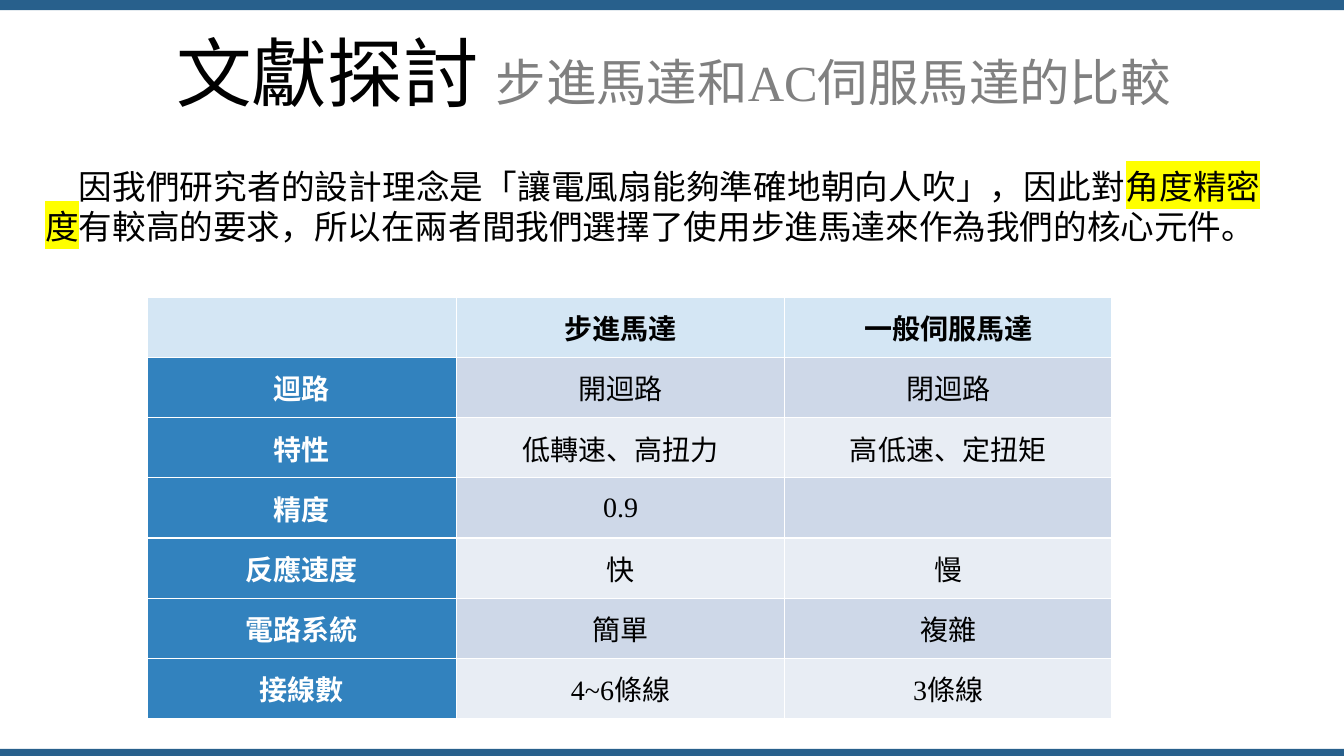
from lxml import etree
from pptx import Presentation
from pptx.dml.color import RGBColor
from pptx.enum import shapes, text
from pptx.oxml.ns import qn
from pptx.util import Inches, Pt

LATIN, CJK = "Times New Roman", "Noto Sans CJK SC"
BLACK, WHITE, GREY = "000000", "FFFFFF", "808080"
BAR, HEADER, LABEL, YELLOW = "28608C", "D4E6F4", "3282BE", "FFFF00"
BANDS = ["CED8E8", "E8EDF4"]
ROWS = [
    ["", "步進馬達", "一般伺服馬達"],
    ["迴路", "開迴路", "閉迴路"],
    ["特性", "低轉速、高扭力", "高低速、定扭矩"],
    ["精度", "0.9", ""],
    ["反應速度", "快", "慢"],
    ["電路系統", "簡單", "複雜"],
    ["接線數", "4~6條線", "3條線"],
]


def paint(fill, color):
    fill.solid()
    fill.fore_color.rgb = RGBColor.from_string(color)


def add_span(para, words, size, color=BLACK, bold=False, latin=LATIN, highlight=None):
    span = para.add_run()
    span.text = words
    font = span.font
    font.size, font.bold, font.name = Pt(size), bold, latin
    paint(font.fill, color)
    properties = font._element
    etree.SubElement(properties, qn("a:ea"), typeface=CJK)
    if highlight:
        marker = etree.Element(qn("a:highlight"))
        etree.SubElement(marker, qn("a:srgbClr"), val=highlight)
        properties.find(qn("a:solidFill")).addnext(marker)


def add_bar(page, left, top, width, height):
    bar = page.shapes.add_shape(
        shapes.MSO_SHAPE.RECTANGLE, *map(Inches, (left, top, width, height)))
    bar.shadow.inherit = False
    paint(bar.fill, BAR)
    bar.line.fill.background()


def add_text_area(page, box, align):
    """Add a wrapping, vertically centred text box and return its paragraph."""
    frame = page.shapes.add_textbox(*map(Inches, box)).text_frame
    frame.word_wrap = True
    frame.vertical_anchor = text.MSO_ANCHOR.MIDDLE
    para = frame.paragraphs[0]
    para.alignment = align
    return para


def add_title(page, *box):
    para = add_text_area(page, box, text.PP_ALIGN.CENTER)
    para.line_spacing = 0.9
    para.space_before = Pt(10)
    add_span(para, "文獻探討 ", 54)
    add_span(para, "步進", 36, GREY, latin=CJK)
    add_span(para, "馬達和AC伺服馬達的比較", 36, GREY)


def add_reasoning(page, *box):
    para = add_text_area(page, box, text.PP_ALIGN.JUSTIFY)
    para._p.get_or_add_pPr().set("indent", str(Inches(0.33)))
    add_span(para, "因我們研究者的設計理念是「讓電風扇能夠準確地朝向人吹」，因此對", 24)
    add_span(para, "角度精密度", 24, highlight=YELLOW)
    add_span(para, "有較高的要求，所以在兩者間我們選擇了使用步進馬達來作為我們的核心元件。", 24)


def fill_cell(cell, words, fill, color, bold):
    paint(cell.fill, fill)
    cell.vertical_anchor = text.MSO_ANCHOR.MIDDLE
    cell.margin_left = cell.margin_right = Inches(0.07)
    cell.margin_top = cell.margin_bottom = 0
    para = cell.text_frame.paragraphs[0]
    para.alignment = text.PP_ALIGN.CENTER
    if words:
        add_span(para, words, 20, color, bold)


def add_comparison(page, left, top, width, height):
    """Add the motor table; the default table style draws its white borders."""
    table = page.shapes.add_table(
        len(ROWS), len(ROWS[0]), *map(Inches, (left, top, width, height))).table
    label_width = 3.07
    table.columns[0].width = Inches(label_width)
    for column in list(table.columns)[1:]:
        column.width = Inches((width - label_width) / 2)
    for r, row in enumerate(ROWS):
        for c, words in enumerate(row):
            if r == 0:
                look = HEADER, BLACK, True
            elif c == 0:
                look = LABEL, WHITE, True
            else:
                look = BANDS[(r - 1) % 2], BLACK, False
            fill_cell(table.cell(r, c), words, *look)


def main():
    deck = Presentation()
    deck.slide_width, deck.slide_height = Inches(13.33), Inches(7.5)
    page = deck.slides.add_slide(deck.slide_layouts[6])
    add_bar(page, 0, 0, 13.33, 0.1)
    add_bar(page, 0, 7.43, 13.33, 0.07)
    add_title(page, 0.35, 0.37, 12.66, 0.79)
    add_comparison(page, 1.46, 2.95, 9.57, 4.18)
    add_reasoning(page, 0.35, 1.59, 12.25, 0.91)
    deck.save("out.pptx")


if __name__ == "__main__":
    main()
